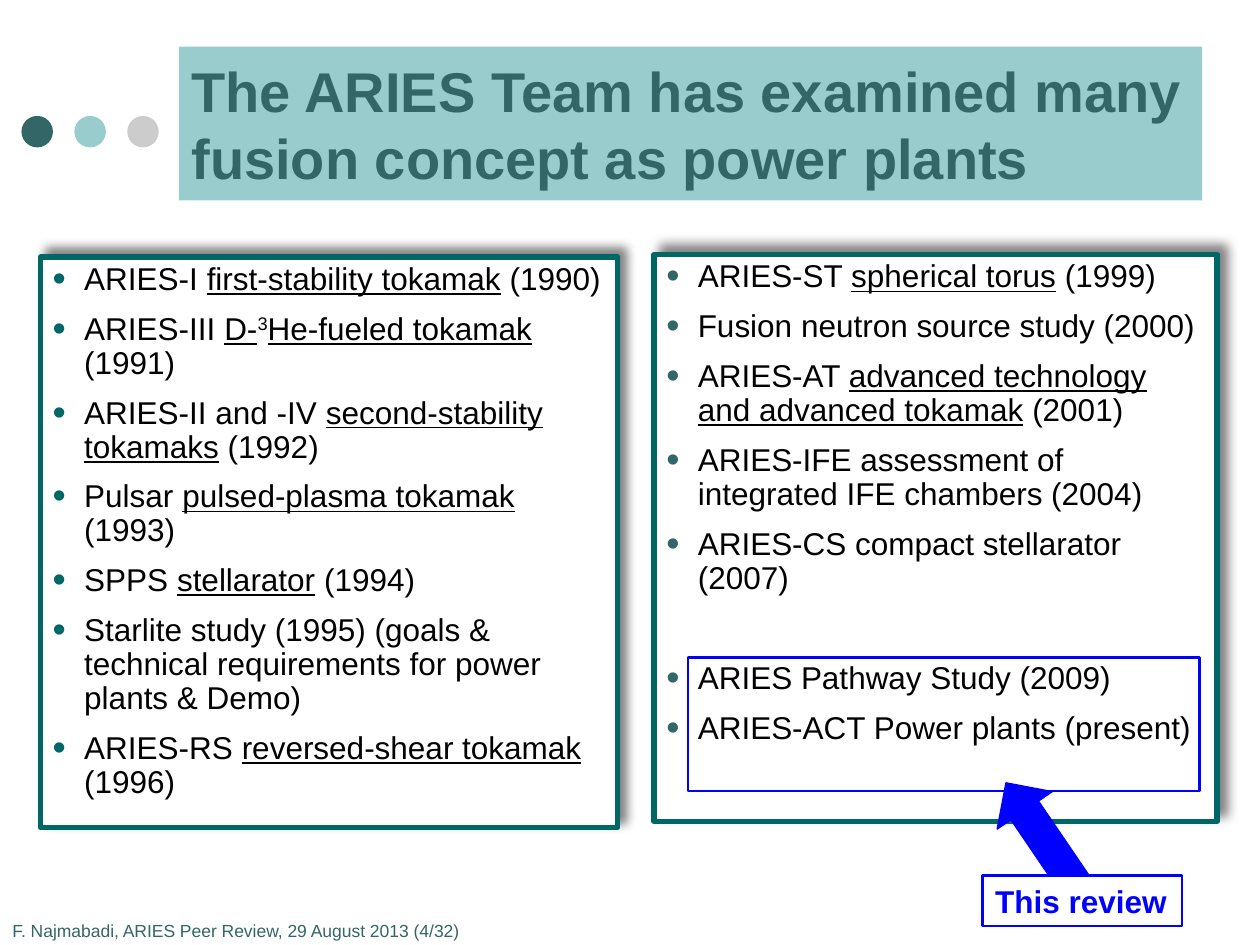
import pptx
import pptx.dml.color
import pptx.enum.shapes
import pptx.enum.text
import pptx.oxml
import pptx.oxml.ns
import pptx.util
from pptx.util import Inches

FONT = "Arial"
COLORS = {
    "dark": "336666",
    "aqua": "99CCCC",
    "gray": "CCCCCC",
    "frame": "006666",
    "white": "FFFFFF",
    "black": "000000",
    "blue": "0000FF",
}
SHAPES = pptx.enum.shapes.MSO_SHAPE
ANCHOR = pptx.enum.text.MSO_ANCHOR
ALIGN = pptx.enum.text.PP_ALIGN
AUTO_SIZE = pptx.enum.text.MSO_AUTO_SIZE
XML_NS = pptx.oxml.ns.nsdecls("a")

# Each item is a list of (text, style) spans
FIRST_STUDIES = [
    [("ARIES-I ", ""), ("first-stability tokamak", "under"), (" (1990)", "")],
    [("ARIES-III ", ""), ("D-", "under"), ("3", "super"),
     ("He-fueled tokamak", "under"), (" (1991)", "")],
    [("ARIES-II and -IV ", ""), ("second-stability tokamaks", "under"), (" (1992)", "")],
    [("Pulsar ", ""), ("pulsed-plasma tokamak", "under"), (" (1993)", "")],
    [("SPPS ", ""), ("stellarator", "under"), (" (1994)", "")],
    [("Starlite study (1995) (goals & technical requirements for power plants & Demo)", "")],
    [("ARIES-RS ", ""), ("reversed-shear tokamak", "under"), (" (1996)", "")],
]
LATER_STUDIES = [
    [("ARIES-ST ", ""), ("spherical torus", "under"), (" (1999)", "")],
    [("Fusion neutron source study (2000)", "")],
    [("ARIES-AT ", ""), ("advanced technology and advanced tokamak", "under"), (" (2001)", "")],
    [("ARIES-IFE assessment of integrated IFE chambers (2004)", "")],
    [("ARIES-CS compact stellarator (2007)", "")],
    [("ARIES Pathway Study (2009)", "")],
    [("ARIES-ACT Power plants (present)", "")],
]


def rgb(name):
    return pptx.dml.color.RGBColor.from_string(COLORS[name])


def paint(shape, fill=None, line=None, width=0.75):
    if fill:
        shape.fill.solid()
        shape.fill.fore_color.rgb = rgb(fill)
    else:
        shape.fill.background()
    if line:
        shape.line.color.rgb = rgb(line)
        shape.line.width = pptx.util.Pt(width)
    else:
        shape.line.fill.background()


def add_box(shapes, kind, box, **style):
    shape = shapes.add_shape(kind, *map(Inches, box))
    shape.shadow.inherit = False
    paint(shape, **style)
    return shape


def add_span(para, text, size, color, bold=False):
    span = para.add_run()
    span.text = text
    span.font.name = FONT
    span.font.size = pptx.util.Pt(size)
    span.font.bold = bold
    span.font.color.rgb = rgb(color)
    return span


def add_bullet(para, color):
    props = para._p.get_or_add_pPr()
    props.set("marL", str(Inches(0.25)))
    props.set("indent", str(Inches(-0.25)))
    for xml in (
        f'<a:buClr {XML_NS}><a:srgbClr val="{COLORS[color]}"/></a:buClr>',
        f'<a:buSzPct {XML_NS} val="120000"/>',
        f'<a:buFont {XML_NS} typeface="{FONT}"/>',
        f'<a:buChar {XML_NS} char="•"/>',
    ):
        props.append(pptx.oxml.parse_xml(xml))


def add_soft_shadow(shape):
    effects = shape._element.spPr.find(pptx.oxml.ns.qn("a:effectLst"))
    offset = pptx.util.Pt(6)
    effects.append(pptx.oxml.parse_xml(
        f'<a:outerShdw {XML_NS} blurRad="{offset}" dist="{offset}" dir="{315 * 60000}" '
        f'algn="bl" rotWithShape="0"><a:srgbClr val="{COLORS["black"]}">'
        '<a:alpha val="50000"/></a:srgbClr></a:outerShdw>'))


def add_dots(page, box):
    left, top, size, step = box
    for index, color in enumerate(("dark", "aqua", "gray")):
        add_box(page.shapes, SHAPES.OVAL, (left + index * step, top, size, size), fill=color)


def add_title(page, box, text):
    title = page.shapes.title
    title.left, title.top, title.width, title.height = map(Inches, box)
    paint(title, fill="aqua")
    frame = title.text_frame
    frame.word_wrap = True
    frame.auto_size = AUTO_SIZE.NONE
    frame.vertical_anchor = ANCHOR.MIDDLE
    para = frame.paragraphs[0]
    para.alignment = ALIGN.LEFT
    add_span(para, text, 32, "dark", bold=True)


def add_study_list(page, box, studies, bullet_color, gap_before=None):
    panel = add_box(page.shapes, SHAPES.RECTANGLE, box, fill="white", line="frame", width=3)
    add_soft_shadow(panel)
    frame = panel.text_frame
    frame.word_wrap = True
    frame.vertical_anchor = ANCHOR.TOP
    for index, study in enumerate(studies):
        para = frame.add_paragraph() if index else frame.paragraphs[0]
        para.alignment = ALIGN.LEFT
        para.line_spacing = 0.9
        space = 38 if index == gap_before else 9
        para.space_before = pptx.util.Pt(space if index else 0)
        add_bullet(para, bullet_color)
        for text, style in study:
            span = add_span(para, text, 18, "black")
            if style == "under":
                span.font.underline = True
            elif style == "super":
                span.font._element.set("baseline", "30000")


def add_footer(page, box, text):
    note = page.shapes.add_textbox(*map(Inches, box))
    note.text_frame.word_wrap = True
    add_span(note.text_frame.paragraphs[0], text, 10, "dark")


def add_review_callout(page, frame_box, arrow_box, label_box):
    group = page.shapes.add_group_shape()
    arrow = add_box(group.shapes, SHAPES.RIGHT_ARROW, arrow_box, fill="blue", line="blue")
    arrow.rotation = 235.8
    label = add_box(group.shapes, SHAPES.RECTANGLE, label_box,
                    fill="white", line="blue", width=1.5)
    label.text_frame.word_wrap = False
    label.text_frame.auto_size = AUTO_SIZE.SHAPE_TO_FIT_TEXT
    label.text_frame.vertical_anchor = ANCHOR.TOP
    para = label.text_frame.paragraphs[0]
    para.alignment = ALIGN.LEFT
    add_span(para, "This review", 18, "blue", bold=True)
    add_box(group.shapes, SHAPES.RECTANGLE, frame_box, line="blue", width=1.5)


def main():
    deck = pptx.Presentation()
    deck.slide_width, deck.slide_height = Inches(10), Inches(7.5)
    page = deck.slides.add_slide(deck.slide_layouts[5])

    # Heading
    add_dots(page, (0.17, 0.92, 0.25, 0.42))
    add_title(page, (1.42, 0.37, 8.12, 1.22),
              "The ARIES Team has examined many fusion concept as power plants")

    # Study lists
    add_study_list(page, (0.32, 2.04, 4.58, 4.53), FIRST_STUDIES, "frame")
    add_study_list(page, (5.19, 2.02, 4.47, 4.5), LATER_STUDIES, "dark", gap_before=5)

    # Footer and callout
    add_footer(page, (0, 7.25, 5.63, 0.25),
               "F. Najmabadi, ARIES Peer Review, 29 August 2013 (4/32)")
    add_review_callout(page, (5.46, 5.22, 4.06, 1.06),
                       (7.75, 6.39, 1.07, 0.53), (7.8, 6.95, 1.58, 0.4))

    deck.save("out.pptx")


if __name__ == "__main__":
    main()
